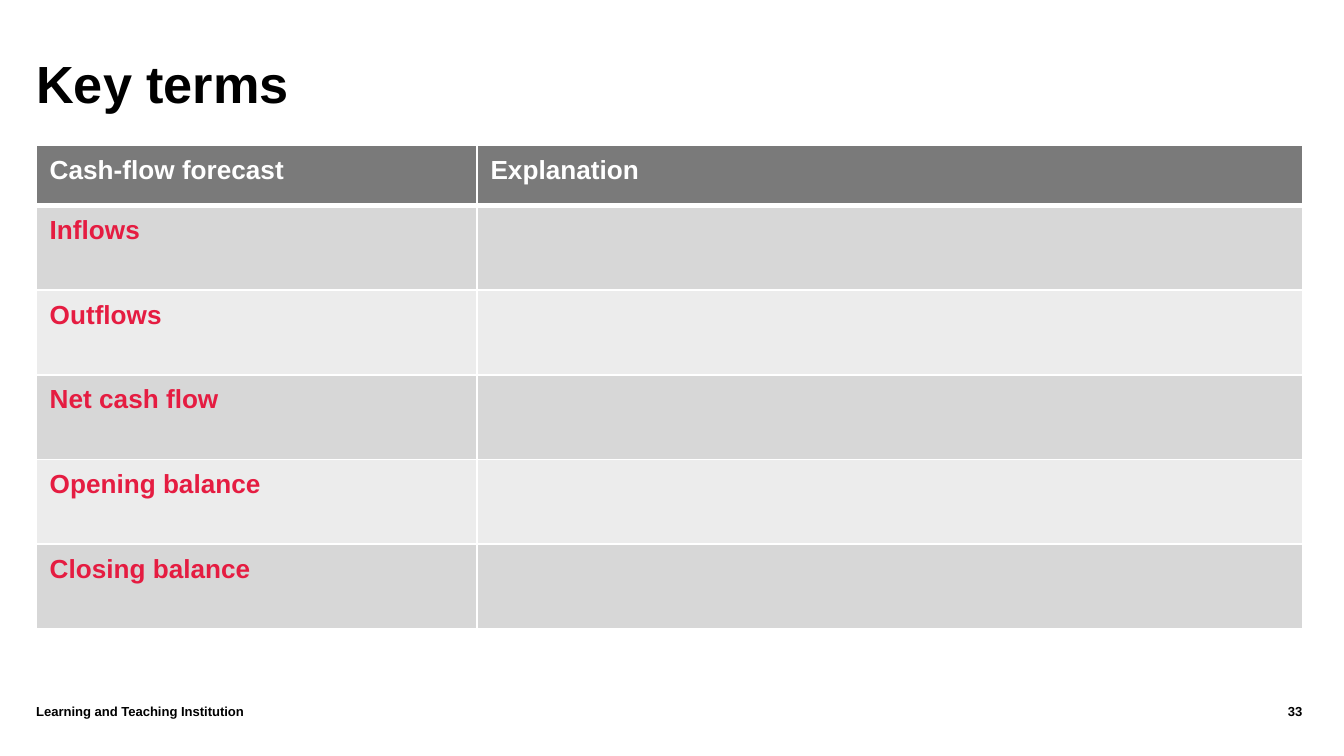
import pptx
import pptx.util
import pptx.dml.color
import pptx.enum.text
import pptx.oxml
import pptx.oxml.ns

Inches, Pt = pptx.util.Inches, pptx.util.Pt
Align = pptx.enum.text.PP_ALIGN

theme = {
    "font": "Arial",
    "ink": "000000", "white": "FFFFFF", "term": "E51C41",
    "head": "7A7A7A", "bands": ("D7D7D7", "ECECEC"),
    "title": 28, "body": 14, "foot": 7,
}


def write(frame, text, size, color, space, align=Align.LEFT):
    """Add one bold run to the first paragraph of a text frame."""
    para = frame.paragraphs[0]
    para.alignment = align
    para.line_spacing = space
    run = para.add_run()
    run.text = text
    font = run.font
    font.name, font.size, font.bold = theme["font"], Pt(size), True
    font.color.rgb = pptx.dml.color.RGBColor.from_string(color)


def edge(cell, sides):
    """Draw white cell borders; sides maps L, R, T, B to points."""
    props = cell._tc.get_or_add_tcPr()
    for spot, (side, width) in enumerate(sides.items()):
        line = pptx.oxml.parse_xml(
            f'<a:ln{side} {pptx.oxml.ns.nsdecls("a")} w="{Pt(width)}">'
            f'<a:solidFill><a:srgbClr val="{theme["white"]}"/></a:solidFill>'
            f'</a:ln{side}>')
        props.insert(spot, line)


deck = pptx.Presentation()
deck.slide_width = Inches(10)
deck.slide_height = deck.slide_width * 9 // 16
slide = deck.slides.add_slide(deck.slide_layouts[5])

left, wide = Inches(0.27), Inches(9.42)

# Title
title = slide.shapes.title
title.left, title.top = left, Inches(0.29)
title.width, title.height = wide, Inches(0.69)
frame = title.text_frame
frame.margin_left = frame.margin_right = 0
frame.margin_top = frame.margin_bottom = 0
frame.vertical_anchor = pptx.enum.text.MSO_ANCHOR.TOP
frame.auto_size = pptx.enum.text.MSO_AUTO_SIZE.NONE
write(frame, "Key terms", theme["title"], theme["ink"], 1.2)

# Table of terms
rows = [
    ("Cash-flow forecast", "Explanation"),
    ("Inflows", ""),
    ("Outflows", ""),
    ("Net cash flow", ""),
    ("Opening balance", ""),
    ("Closing balance", ""),
]
first, rest = Inches(0.45), Inches(0.63)
grid = slide.shapes.add_table(
    len(rows), 2, left, Inches(1.08), wide,
    first + rest * (len(rows) - 1)).table
grid.columns[0].width = Inches(3.28)
grid.columns[1].width = wide - Inches(3.28)

for r, row in enumerate(rows):
    grid.rows[r].height = rest if r else first
    fill = theme["bands"][(r - 1) % 2] if r else theme["head"]
    color = theme["term"] if r else theme["white"]
    for c, text in enumerate(row):
        cell = grid.cell(r, c)
        cell.fill.solid()
        cell.fill.fore_color.rgb = pptx.dml.color.RGBColor.from_string(fill)
        edge(cell, {"L": 1, "R": 1, "T": 3 if r == 1 else 1,
                    "B": 3 if r == 0 else 1})
        if text:
            write(cell.text_frame, text, theme["body"], color, 1.12)

# Footer and page number
split = Inches(8.7)
for text, start, end, align in [
    ("Learning and Teaching Institution", left, split, Align.LEFT),
    ("33", split, left + wide, Align.RIGHT),
]:
    box = slide.shapes.add_textbox(
        start, Inches(5.21), end - start, Inches(0.3))
    frame = box.text_frame
    frame.word_wrap = True
    frame.margin_left = frame.margin_right = 0
    frame.margin_top = frame.margin_bottom = 0
    write(frame, text, theme["foot"], theme["ink"], 1.2, align)

deck.save("out.pptx")
